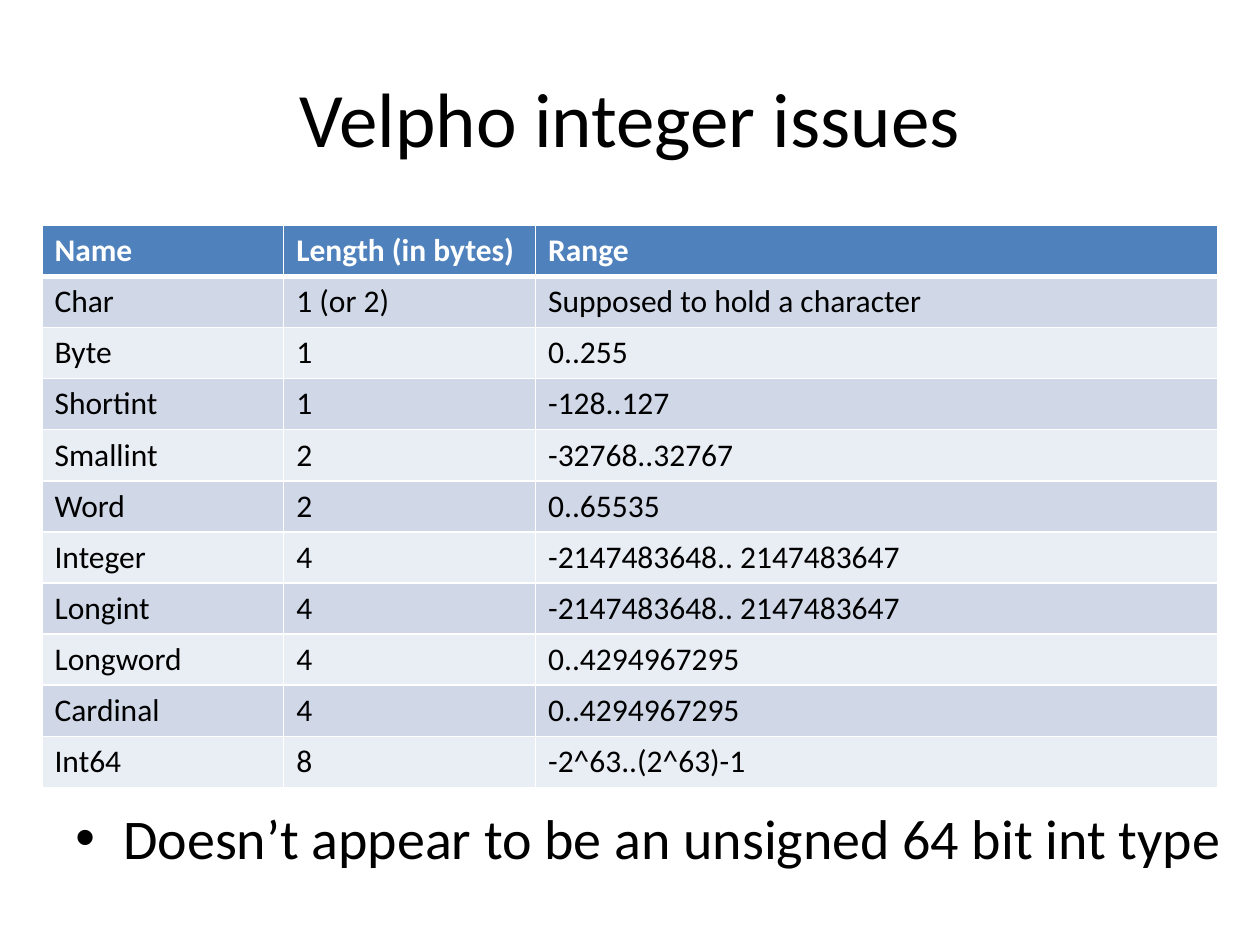
from lxml import etree
from pptx import Presentation
from pptx.dml.color import RGBColor
from pptx.enum.text import MSO_ANCHOR, PP_ALIGN
from pptx.oxml.ns import qn
from pptx.util import Inches, Pt

LEFT, CENTER = PP_ALIGN.LEFT, PP_ALIGN.CENTER
TOP, MIDDLE = MSO_ANCHOR.TOP, MSO_ANCHOR.MIDDLE
BLACK = RGBColor(0x00, 0x00, 0x00)
WHITE = RGBColor(0xFF, 0xFF, 0xFF)
HEADER_BLUE = RGBColor(0x4F, 0x81, 0xBD)
BANDS = (RGBColor(0xE9, 0xED, 0xF4), RGBColor(0xD0, 0xD8, 0xE8))
FONT = "Calibri"
WIDTH, HEIGHT = Inches(10), Inches(7.5)
TITLE_ONLY = 5

TITLE_BOX = (0.05, 0.04, 0.9, 1 / 6)
TABLE_BOX = (1 / 30, 0.2385, 14 / 15, 0.595)
BULLET_BOX = (0.05, 0.844, 0.95, 0.1)
COLUMN_SHARES = (1.92, 2, 5.42)

INTEGER_TYPES = (
    ("Name", "Length (in bytes)", "Range"),
    ("Char", "1 (or 2)", "Supposed to hold a character"),
    ("Byte", "1", "0..255"),
    ("Shortint", "1", "-128..127"),
    ("Smallint", "2", "-32768..32767"),
    ("Word", "2", "0..65535"),
    ("Integer", "4", "-2147483648.. 2147483647"),
    ("Longint", "4", "-2147483648.. 2147483647"),
    ("Longword", "4", "0..4294967295"),
    ("Cardinal", "4", "0..4294967295"),
    ("Int64", "8", "-2^63..(2^63)-1"),
)


def to_slide(box):
    left, top, width, height = box
    return (round(left * WIDTH), round(top * HEIGHT),
            round(width * WIDTH), round(height * HEIGHT))


def write_text(frame, text, size, color=BLACK, bold=False, align=LEFT, anchor=TOP):
    frame.word_wrap = True
    frame.vertical_anchor = anchor
    para = frame.paragraphs[0]
    para.alignment = align
    span = para.add_run()
    span.text = text
    span.font.name = FONT
    span.font.size = Pt(size)
    span.font.bold = bold
    span.font.color.rgb = color
    return para


def set_borders(cell, **widths):
    properties = cell._tc.get_or_add_tcPr()
    for index, side in enumerate("LRTB"):
        line = etree.Element(qn(f"a:ln{side}"), w=str(Pt(widths.get(side, 1))))
        fill = etree.SubElement(line, qn("a:solidFill"))
        etree.SubElement(fill, qn("a:srgbClr"), val=str(WHITE))
        properties.insert(index, line)


def add_title(page, box, text):
    title = page.shapes.title
    title.left, title.top, title.width, title.height = to_slide(box)
    write_text(title.text_frame, text, 44, align=CENTER, anchor=MIDDLE)


def add_type_table(page, box, rows):
    left, top, width, height = to_slide(box)
    table = page.shapes.add_table(
        len(rows), len(COLUMN_SHARES), left, top, width, height).table
    for column, share in zip(table.columns, COLUMN_SHARES):
        column.width = round(width * share / sum(COLUMN_SHARES))
    for row_index, values in enumerate(rows):
        table.rows[row_index].height = height // len(rows)
        header = row_index == 0
        for column_index, text in enumerate(values):
            cell = table.cell(row_index, column_index)
            cell.fill.solid()
            cell.fill.fore_color.rgb = HEADER_BLUE if header else BANDS[row_index % 2]
            set_borders(cell, B=3 if header else 1, T=3 if row_index == 1 else 1)
            write_text(cell.text_frame, text, 18,
                       color=WHITE if header else BLACK, bold=header)


def add_bullet(page, box, text):
    frame = page.shapes.add_textbox(*to_slide(box)).text_frame
    para = write_text(frame, text, 32)
    properties = para._p.get_or_add_pPr()
    properties.set("marL", str(Inches(0.38)))
    properties.set("indent", str(Inches(-0.38)))
    spacing = etree.SubElement(properties, qn("a:spcBef"))
    etree.SubElement(spacing, qn("a:spcPct"), val="20000")
    etree.SubElement(properties, qn("a:buFont"), typeface="Arial")
    etree.SubElement(properties, qn("a:buChar"), char="•")


def main():
    deck = Presentation()
    deck.slide_width, deck.slide_height = WIDTH, HEIGHT
    page = deck.slides.add_slide(deck.slide_layouts[TITLE_ONLY])
    add_title(page, TITLE_BOX, "Velpho integer issues")
    add_type_table(page, TABLE_BOX, INTEGER_TYPES)
    add_bullet(page, BULLET_BOX, "Doesn’t appear to be an unsigned 64 bit int type")
    deck.save("out.pptx")


if __name__ == "__main__":
    main()
